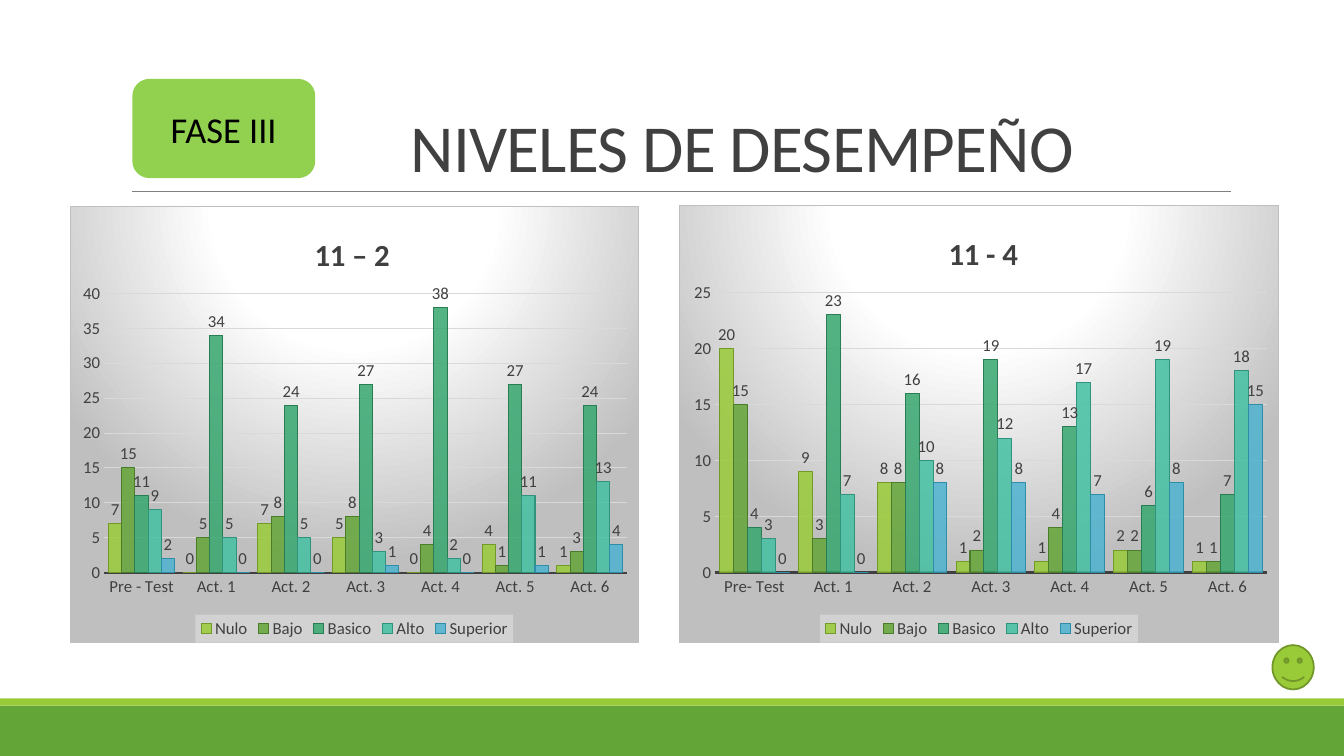
from lxml import etree
from pptx import Presentation
from pptx.chart.data import CategoryChartData
from pptx.dml.color import RGBColor
from pptx.enum.chart import XL_CHART_TYPE as ChartType, XL_LABEL_POSITION as LabelPos
from pptx.enum.chart import XL_LEGEND_POSITION as LegendPos, XL_TICK_MARK as TickMark
from pptx.enum.shapes import MSO_CONNECTOR as Connector, MSO_SHAPE as Shape
from pptx.enum.text import MSO_ANCHOR as Anchor, MSO_AUTO_SIZE as AutoSize, PP_ALIGN as Align
from pptx.oxml import parse_xml
from pptx.oxml.ns import nsdecls, qn
from pptx.util import Inches, Pt

# Content
TITLE = "NIVELES DE DESEMPEÑO"
PHASE = "FASE III"
ACTIVITIES = [f"Act. {number}" for number in range(1, 7)]
LEVELS = [  # name, fill, outline
    ("Nulo", "99CB38", "739A28"),
    ("Bajo", "63A537", "4A7C29"),
    ("Basico", "37A76F", "297D53"),
    ("Alto", "44C1A3", "31937B"),
    ("Superior", "4EB3CF", "2E8EA8"),
]
GROUPS = [
    {"title": "11 – 2", "title_x": 0.42, "box": (0.69, 2.04, 5.65, 4.34),
     "first": "Pre - Test", "top": 40,
     "values": [(7, 0, 7, 5, 0, 4, 1), (15, 5, 8, 8, 4, 1, 3),
                (11, 34, 24, 27, 38, 27, 24), (9, 5, 5, 3, 2, 11, 13),
                (2, 0, 0, 1, 0, 1, 4)]},
    {"title": "11 - 4", "title_x": 0.44, "box": (6.73, 2.03, 5.96, 4.35),
     "first": "Pre- Test", "top": 25,
     "values": [(20, 9, 8, 1, 1, 2, 1), (15, 3, 8, 2, 4, 2, 1),
                (4, 23, 16, 19, 13, 6, 7), (3, 7, 10, 12, 17, 19, 18),
                (0, 0, 8, 8, 7, 8, 15)]},
]
COLORS = {
    "green": "63A537", "lime": "99CB38", "badge": "92D050", "smile": "719629",
    "rule": "808080", "text": "404040", "black": "000000",
    "grid": "D9D9D9", "border": "BFBFBF",
}
FONT = "Calibri"


def rgb(value):
    return RGBColor.from_string(value)


def inches(*lengths):
    return [Inches(length) for length in lengths]


def set_font(font, size, color=COLORS["text"], bold=False):
    font.name, font.size, font.bold = FONT, Pt(size), bold
    font.color.rgb = rgb(color)


def write_text(frame, text, size, color=COLORS["text"], bold=False,
               align=Align.CENTER, line_spacing=None, tracking=None):
    paragraph = frame.paragraphs[0]
    paragraph.alignment = align
    if line_spacing:
        paragraph.line_spacing = line_spacing
    run = paragraph.add_run()
    run.text = text
    set_font(run.font, size, color, bold)
    if tracking:
        run.font._element.set("spc", str(int(tracking * 100)))


def add_block(slide, kind, box, fill, line=None, width=1):
    block = slide.shapes.add_shape(kind, *inches(*box))
    block.shadow.inherit = False
    block.fill.solid()
    block.fill.fore_color.rgb = rgb(fill)
    if line:
        block.line.color.rgb = rgb(line)
        block.line.width = Pt(width)
    else:
        block.line.fill.background()
    return block


def set_layout(parent, x, y, w=None, h=None):
    """Place a chart part by fractions of the chart's size."""
    for old in parent.findall(qn("c:layout")):
        parent.remove(old)
    target = '<c:layoutTarget val="inner"/>' if w else ""
    places = "".join(f'<c:{key} val="{value}"/>' for key, value in
                     zip("xywh", (x, y, w, h)) if value is not None)
    layout = parse_xml(
        f'<c:layout {nsdecls("c")}><c:manualLayout>{target}<c:xMode val="edge"/>'
        f'<c:yMode val="edge"/>{places}</c:manualLayout></c:layout>')
    text = parent.find(qn("c:tx"))
    if text is None:
        parent.insert(0, layout)
    else:
        text.addnext(layout)


def set_alpha(fill_parent, percent):
    color = fill_parent.find(qn("a:solidFill")).find(qn("a:srgbClr"))
    etree.SubElement(color, qn("a:alpha")).set("val", str(percent * 1000))


def paint_background(chart):
    stops = "".join(f'<a:gs pos="{pos * 1000}"><a:srgbClr val="{color}"/></a:gs>'
                    for pos, color in [(0, "FFFFFF"), (39, "FFFFFF"), (100, "BFBFBF")])
    chart.element.find(qn("c:chart")).addnext(parse_xml(
        f'<c:spPr {nsdecls("c", "a")}><a:gradFill><a:gsLst>{stops}</a:gsLst>'
        '<a:path path="circle"><a:fillToRect l="50000" t="-80000" r="50000" b="180000"/>'
        f'</a:path></a:gradFill><a:ln w="{Pt(0.75)}"><a:solidFill>'
        f'<a:srgbClr val="{COLORS["border"]}"/></a:solidFill></a:ln></c:spPr>'))


def add_group_chart(slide, group):
    data = CategoryChartData()
    data.categories = [group["first"], *ACTIVITIES]
    for (name, _, _), values in zip(LEVELS, group["values"]):
        data.add_series(name, values)
    chart = slide.shapes.add_chart(
        ChartType.COLUMN_CLUSTERED, *inches(*group["box"]), data).chart
    set_font(chart.font, 10, COLORS["black"])
    paint_background(chart)

    # Title and plot area
    write_text(chart.chart_title.text_frame, group["title"], 22, bold=True)
    chart.chart_title.include_in_layout = False
    set_layout(chart.chart_title.element, group["title_x"], 0.05)
    set_layout(chart.element.find(qn("c:chart")).find(qn("c:plotArea")),
               0.06, 0.2, 0.92, 0.64)

    # Axes
    for axis in (chart.category_axis, chart.value_axis):
        axis.major_tick_mark = axis.minor_tick_mark = TickMark.NONE
        set_font(axis.tick_labels.font, 12)
    chart.category_axis.format.line.color.rgb = rgb(COLORS["text"])
    chart.category_axis.format.line.width = Pt(1.5)
    scale = chart.value_axis
    scale.minimum_scale, scale.maximum_scale, scale.major_unit = 0, group["top"], 5
    scale.format.line.fill.background()
    scale.major_gridlines.format.line.color.rgb = rgb(COLORS["grid"])
    scale.major_gridlines.format.line.width = Pt(0.75)

    # Columns and their labels
    plot = chart.plots[0]
    plot.gap_width, plot.overlap, plot.vary_by_categories = 65, 0, False
    for series, (_, fill, outline) in zip(plot.series, LEVELS):
        series.invert_if_negative = False
        series.format.fill.solid()
        series.format.fill.fore_color.rgb = rgb(fill)
        series.format.line.color.rgb = rgb(outline)
        series.format.line.width = Pt(0.75)
        set_alpha(series._element.find(qn("c:spPr")), 85)
        labels = series.data_labels
        labels.show_value, labels.position = True, LabelPos.OUTSIDE_END
        set_font(labels.font, 12)

    # Legend
    chart.has_legend = True
    legend = chart.legend
    legend.position, legend.include_in_layout = LegendPos.BOTTOM, False
    set_font(legend.font, 12)
    chart.element.find(qn("c:chart")).find(qn("c:legend")).find(qn("c:txPr")).addprevious(
        parse_xml(f'<c:spPr {nsdecls("c", "a")}><a:solidFill><a:srgbClr val="F2F2F2">'
                  '<a:alpha val="39000"/></a:srgbClr></a:solidFill></c:spPr>'))


def main():
    deck = Presentation()
    deck.slide_width, deck.slide_height = inches(13.33, 7.5)
    slide = deck.slides.add_slide(deck.slide_layouts[5])

    # Footer bands and rule under the title
    add_block(slide, Shape.RECTANGLE, (0, 7, 13.33, 0.5), COLORS["green"])
    add_block(slide, Shape.RECTANGLE, (0, 6.93, 13.33, 0.07), COLORS["lime"])
    rule = slide.shapes.add_connector(Connector.STRAIGHT, *inches(1.31, 1.9, 12.21, 1.9))
    rule.line.color.rgb = rgb(COLORS["rule"])
    rule.line.width = Pt(0.5)
    etree.SubElement(rule._element.spPr, qn("a:effectLst"))

    # Phase badge and title
    badge = add_block(slide, Shape.ROUNDED_RECTANGLE, (1.32, 0.79, 1.8, 0.97),
                      COLORS["badge"], COLORS["badge"])
    badge.text_frame.vertical_anchor = Anchor.MIDDLE
    write_text(badge.text_frame, PHASE, 26, COLORS["black"])
    title = slide.shapes.title
    title.left, title.top, title.width, title.height = inches(3.97, 0.31, 8.23, 1.59)
    title.text_frame.vertical_anchor = Anchor.BOTTOM
    title.text_frame.auto_size = AutoSize.NONE
    write_text(title.text_frame, TITLE, 48, align=Align.LEFT,
               line_spacing=0.85, tracking=-0.5)

    # Charts and smiley
    for group in GROUPS:
        add_group_chart(slide, group)
    add_block(slide, Shape.SMILEY_FACE, (12.62, 6.4, 0.41, 0.44),
              COLORS["lime"], COLORS["smile"], 1.25)
    deck.save("out.pptx")


if __name__ == "__main__":
    main()
